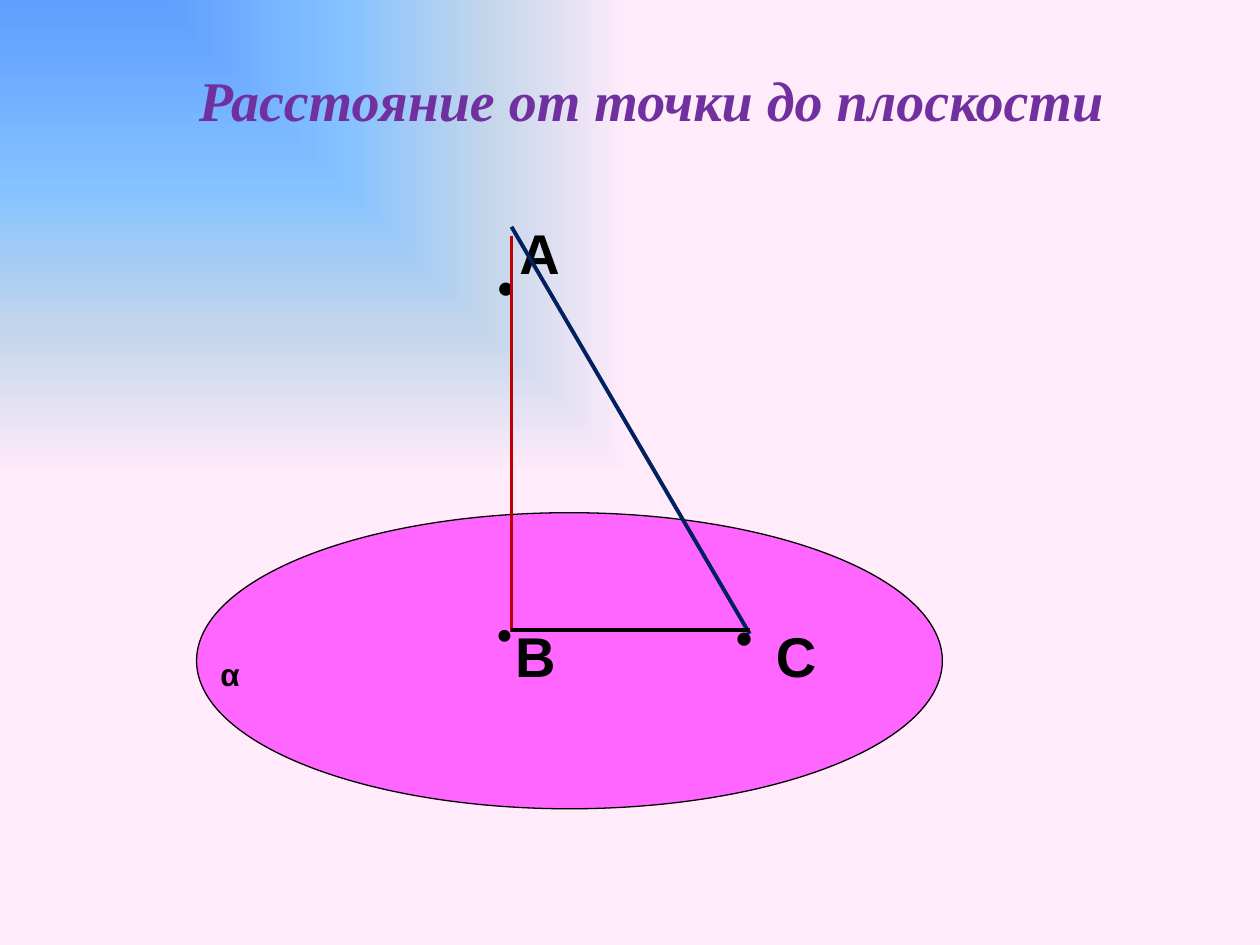
import pptx
import pptx.dml.color
import pptx.enum.shapes
import pptx.enum.text
import pptx.oxml
import pptx.oxml.ns
import pptx.util
from lxml import etree

Pt = pptx.util.Pt
qn = pptx.oxml.ns.qn

COLORS = {
    "title": "7030A0",
    "ink": "000000",
    "plane": "FF66FF",
    "perpendicular": "C00000",
    "oblique": "002060",
}
GRADIENT = {0: "5E9EFF", 40: "85C2FF", 70: "C4D6EB", 100: "FFEBFA"}


def rgb(name):
    """Return the named palette colour."""
    return pptx.dml.color.RGBColor.from_string(COLORS[name])


def paint_background(page):
    """Fill the page with a gradient spreading from the top left corner."""
    page.background.fill.gradient()
    old = page.element.find(".//" + qn("a:gradFill"))
    stops = "".join(
        f'<a:gs pos="{pos * 1000}"><a:srgbClr val="{color}"/></a:gs>'
        for pos, color in GRADIENT.items()
    )
    new = pptx.oxml.parse_xml(
        f'<a:gradFill {pptx.oxml.ns.nsdecls("a")} rotWithShape="1"><a:gsLst>{stops}</a:gsLst>'
        '<a:path path="rect"><a:fillToRect r="100000" b="100000"/></a:path></a:gradFill>'
    )
    old.getparent().replace(old, new)


def add_label(shapes, box, runs, color="ink", italic=False, wrap=False):
    """Add a bold text box made of (text, size, font, baseline percent) runs."""
    label = shapes.add_textbox(*map(Pt, box))
    frame = label.text_frame
    frame.word_wrap = wrap
    frame.auto_size = pptx.enum.text.MSO_AUTO_SIZE.SHAPE_TO_FIT_TEXT
    para = frame.paragraphs[0]
    para.font.bold = True
    para.font.italic = italic
    para.font.color.rgb = rgb(color)
    for text, size, font, baseline in runs:
        span = para.add_run()
        span.text = text
        span.font.size = Pt(size)
        span.font.name = font
        if baseline:
            span.font._element.set("baseline", str(baseline * 1000))


def add_segment(shapes, start, end, color):
    """Draw a straight segment between two points."""
    segment = shapes.add_connector(
        pptx.enum.shapes.MSO_CONNECTOR.STRAIGHT, *map(Pt, start + end)
    )
    segment.line.color.rgb = rgb(color)
    segment.line.width = Pt(2.25)
    etree.SubElement(segment._element.spPr, qn("a:effectLst"))


def add_plane(shapes, box):
    """Draw the plane as an ellipse."""
    plane = shapes.add_shape(pptx.enum.shapes.MSO_SHAPE.OVAL, *map(Pt, box))
    plane.shadow.inherit = False
    plane.fill.solid()
    plane.fill.fore_color.rgb = rgb("plane")
    plane.line.color.rgb = rgb("ink")
    plane.line.width = Pt(0.75)


def add_figure(page, left, top, width, height):
    """Draw the plane with the perpendicular, the oblique and its projection."""
    shapes = page.shapes.add_group_shape().shapes
    foot_x, end_x = left + 180, left + 316.1
    base_y = top + 286.6

    def dot(size):
        """Return a lowered point mark."""
        return ("·", size, "Times New Roman", -30)

    def letter(text, size=32):
        """Return a letter naming a part of the figure."""
        return (text, size, "Arial", 0)

    add_label(shapes, (left + 162, top, 64.1, 82.8), [dot(80), letter("А")])
    add_plane(shapes, (left, top + height - 169.2, width, 169.2))
    add_label(shapes, (left + 162, top + 206.7, 35.3, 133.9), [dot(72)])
    add_segment(shapes, (foot_x, top + 61.2), (foot_x, base_y + 1.4), "perpendicular")
    add_segment(shapes, (foot_x, top + 56.2), (end_x, base_y + 2.2), "oblique")
    add_label(shapes, (left + 298.1, top + 200.2, 37.4, 119.5), [dot(80)])
    add_label(shapes, (left + 175, top + 278, 43.9, 53.3), [letter("В")])
    add_label(shapes, (left + 324, top + 278, 45.4, 53.3), [letter("С")], wrap=True)
    add_segment(shapes, (foot_x, base_y), (end_x, base_y), "ink")
    add_label(shapes, (left + 6.5, top + 297.4, 29.5, 33.1), [letter("α", 18)])


def add_title(page, *box):
    """Write the slide title."""
    title = ("Расстояние от точки до плоскости", 32, "Times New Roman", 0)
    add_label(page.shapes, box, [title], "title", italic=True)


def main():
    """Build and save the deck."""
    deck = pptx.Presentation()
    deck.slide_width, deck.slide_height = Pt(720), Pt(540)
    page = deck.slides.add_slide(deck.slide_layouts[6])
    paint_background(page)
    add_figure(page, 112.3, 73.4, 426.2, 388.8)
    add_title(page, 106.6, 33.8, 536.4, 46.1)
    deck.save("out.pptx")


if __name__ == "__main__":
    main()
